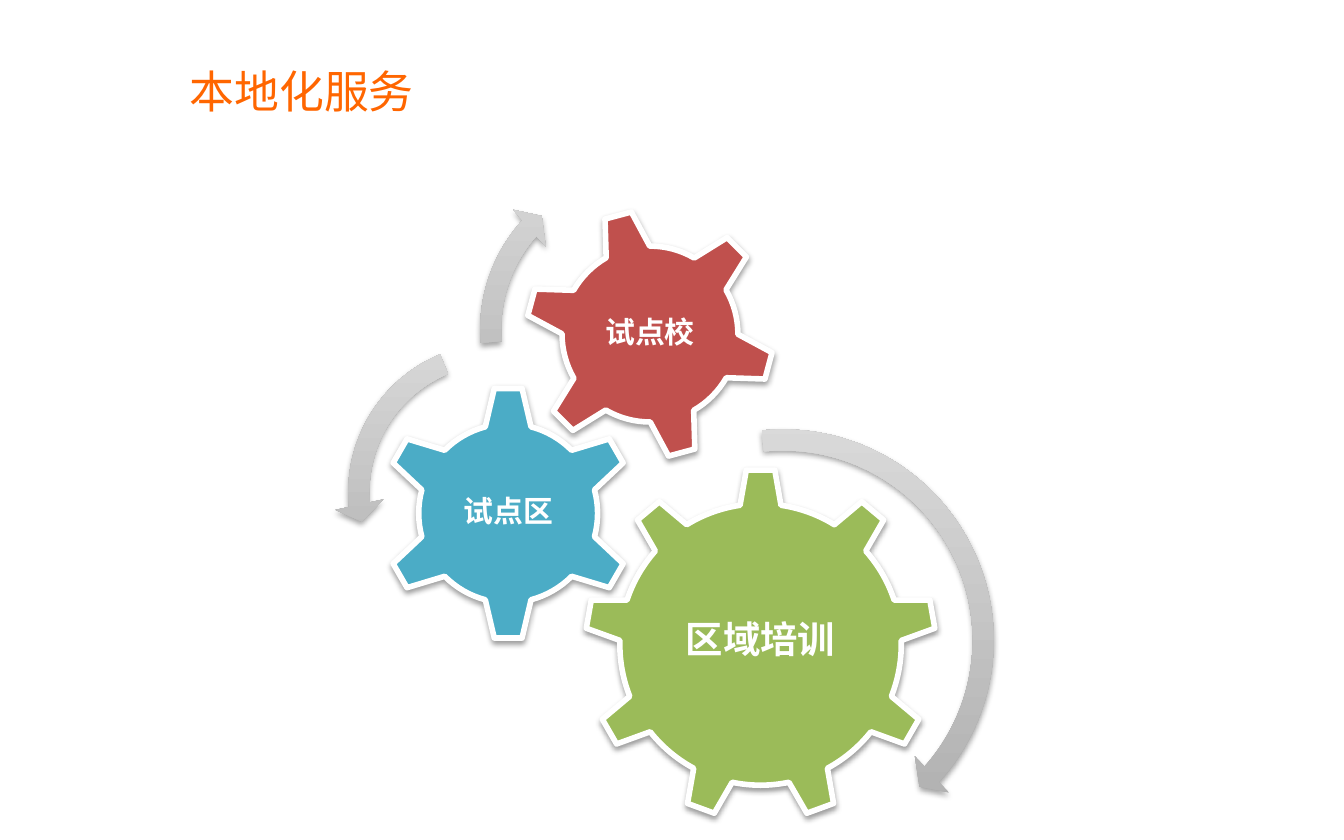
from lxml.etree import SubElement
from pptx import Presentation
from pptx.dml.color import RGBColor
from pptx.enum.shapes import MSO_SHAPE as Preset
from pptx.enum.text import MSO_ANCHOR as Anchor, MSO_AUTO_SIZE as AutoSize, PP_ALIGN as Align
from pptx.oxml.ns import qn
from pptx.util import Cm, Pt

FONT = "Noto Sans CJK SC"
GEARS = [
    (Preset.GEAR_9, (11.05, 8.86, 6.65), 0, "9BBB59", "区域培训", 20, (3.99, 3.43), 0.06),
    (Preset.GEAR_6, (7.19, 7.29, 4.83), 0, "4BACC6", "试点区", 16, (2.41, 2.39), 0),
    (Preset.GEAR_6, (9.91, 3.94, 4.75), 345, "C0504D", "试点校", 16, (2.67, 2.67), 0),
]
ARROWS = [
    (Preset.CIRCULAR_ARROW, (10.54, 7.85, 8.51), (0.047, 2.99, 25.199, 158.533, 0.055)),
    (Preset.LEFT_CIRCULAR_ARROW, (6.32, 6.22, 6.17), (0.065, 4.3, 104.891, 148.378, 0.075)),
    (Preset.CIRCULAR_ARROW, (8.81, 2.9, 6.65), (0.06, 3.941, 133.138, 105.082, 0.07)),
]


def colour(value):
    return RGBColor.from_string(value)


def apply(target, values):
    for name, value in values.items():
        setattr(target, name, value)


def write(frame, text, size, hue, bold, align, frame_format):
    apply(frame, frame_format)
    para = frame.paragraphs[0]
    para.alignment = align
    span = para.add_run()
    span.text = text
    apply(span.font, {"name": FONT, "size": Pt(size), "bold": bold})
    span.font.color.rgb = colour(hue)
    east_asian = SubElement(span.font._element, qn("a:ea"))
    east_asian.set("typeface", FONT)
    return para


def add_title(page, text):
    title = page.shapes.title
    apply(title, {"left": Cm(3.33), "top": Cm(1.07), "width": Cm(4.78), "height": Cm(1.27)})
    write(title.text_frame, text, 24, "FF6600", False, Align.LEFT, {
        "word_wrap": False,
        "auto_size": AutoSize.SHAPE_TO_FIT_TEXT,
        "vertical_anchor": Anchor.TOP,
    })


def add_shadow(shape, opacity, distance):
    shape.shadow.inherit = False
    effects = shape._element.spPr.find(qn("a:effectLst"))
    shadow = SubElement(effects, qn("a:outerShdw"), {
        "blurRad": str(Pt(3.1)),
        "dist": str(Pt(distance)),
        "dir": "5400000",
        "rotWithShape": "0",
    })
    black = SubElement(shadow, qn("a:srgbClr"), val="000000")
    SubElement(black, qn("a:alpha"), val=str(opacity * 1000))


def add_square(page, preset, place):
    left, top, side = (Cm(value) for value in place)
    return page.shapes.add_shape(preset, left, top, side, side)


def add_gear(page, preset, place, rotation, hue, text, size, label_size, lift):
    gear = add_square(page, preset, place)
    gear.rotation = rotation
    gear.fill.solid()
    gear.fill.fore_color.rgb = colour(hue)
    gear.line.color.rgb = colour("FFFFFF")
    gear.line.width = Pt(3)
    add_shadow(gear, 38, 1.6)

    left, top, side = place
    width, height = label_size
    label = page.shapes.add_textbox(
        Cm(left + (side - width) / 2), Cm(top + (side - height) / 2 - lift),
        Cm(width), Cm(height))
    margins = {f"margin_{edge}": Cm(0.06) for edge in ("left", "top", "right", "bottom")}
    para = write(label.text_frame, text, size, "FFFFFF", True, Align.CENTER, {
        "word_wrap": True, "vertical_anchor": Anchor.MIDDLE, **margins})
    para.line_spacing = 0.9


def add_arrow(page, preset, place, adjustments):
    arrow = add_square(page, preset, place)
    for index, value in enumerate(adjustments):
        arrow.adjustments[index] = value
    arrow.fill.gradient()
    arrow.fill.gradient_angle = 90
    for stop, (position, hue) in zip(arrow.fill.gradient_stops, ((0, "ABABAB"), (1, "DADADA"))):
        stop.position = position
        stop.color.rgb = colour(hue)
    arrow.line.fill.background()
    add_shadow(arrow, 35, 1.8)


def main():
    deck = Presentation()
    apply(deck, {"slide_width": Cm(25.4), "slide_height": Cm(15.88)})
    page = deck.slides.add_slide(deck.slide_layouts.get_by_name("Title Only"))
    add_title(page, "本地化服务")
    for gear in GEARS:
        add_gear(page, *gear)
    for arrow in ARROWS:
        add_arrow(page, *arrow)
    deck.save("out.pptx")


if __name__ == "__main__":
    main()
